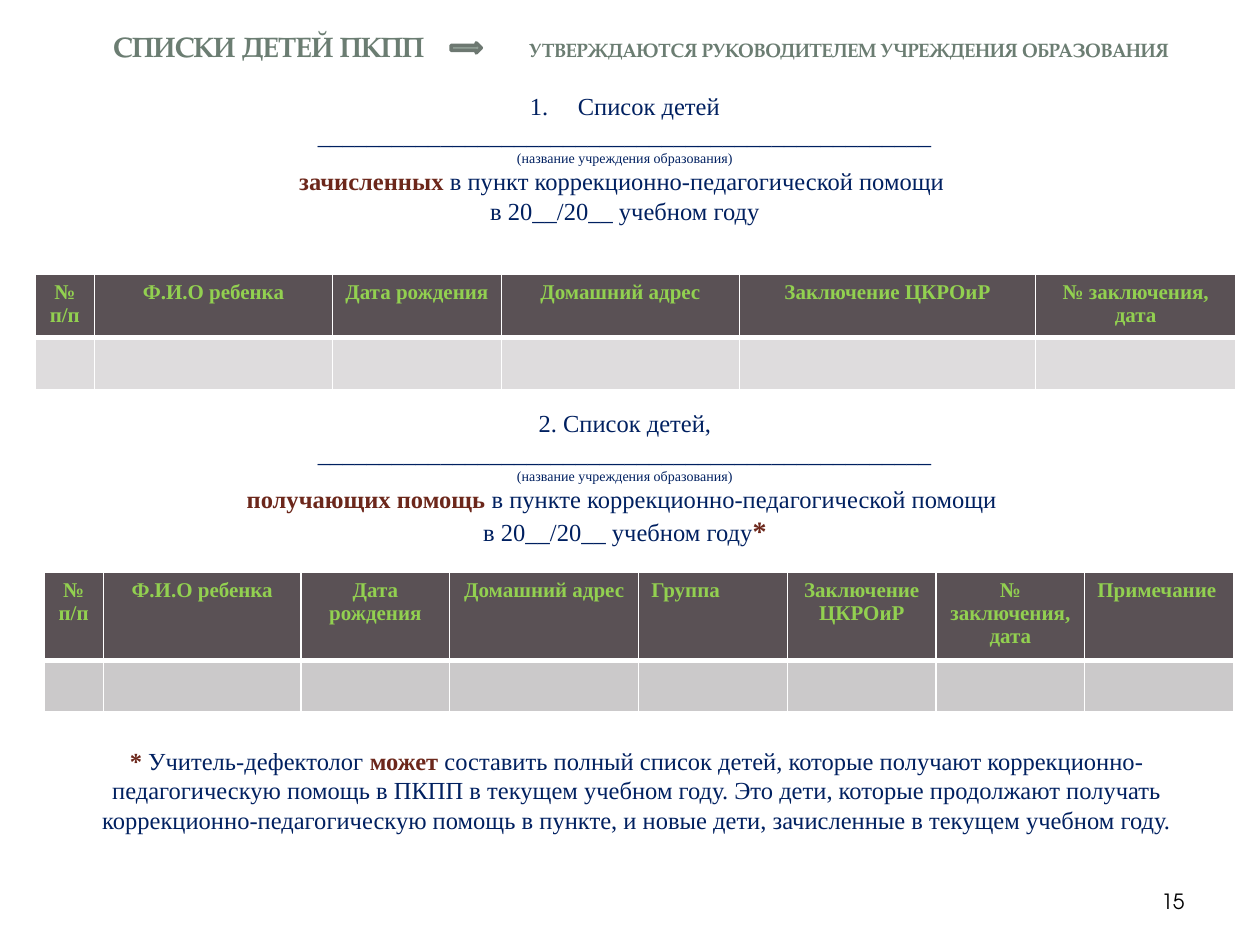
from lxml import etree
from pptx import Presentation
from pptx import util as u
from pptx.dml.color import RGBColor
from pptx.enum import shapes, text
from pptx.oxml.ns import qn

SERIF, TITLE_FONT, NUMBER_FONT = "Times New Roman", "TeX Gyre Pagella", "TeX Gyre Adventor"
NAVY, RED, GREEN, SAGE = "002060", "6C271B", "92D050", "6B7D72"
DARK, WHITE = "5A5155", "FFFFFF"
CENTER, LEFT, RIGHT = text.PP_ALIGN.CENTER, text.PP_ALIGN.LEFT, text.PP_ALIGN.RIGHT

# Content: a paragraph is a list of runs (text, size, colour, bold)
# Single lines: box, runs, font, alignment
LINES = [
    ((0.8, 0.13, 2.75, 0.47),
     [("СПИСКИ ДЕТЕЙ ПКПП", 16, SAGE, True)], TITLE_FONT, LEFT),
    ((4.1, 0.16, 5.63, 0.47),
     [("УТВЕРЖДАЮТСЯ РУКОВОДИТЕЛЕМ УЧРЕЖДЕНИЯ ОБРАЗОВАНИЯ", 11, SAGE, True)],
     TITLE_FONT, LEFT),
    ((7.17, 6.95, 2.33, 0.4), [("15", 12, "000000", False)], NUMBER_FONT, RIGHT),
]
INSTITUTION = [[("_" * 50, 14, NAVY, False)],
               [("(название учреждения образования)", 8, NAVY, False)]]
YEAR = ("в 20__/20__ учебном году", 14, NAVY, False)
ENROLLED = [[("Список детей", 14, NAVY, False)], *INSTITUTION,
            [("зачисленных", 14, RED, True),
             (" в пункт коррекционно-педагогической помощи ", 14, NAVY, False)],
            [YEAR]]
ASSISTED = [[("2. Список детей,", 14, NAVY, False)], *INSTITUTION,
            [("получающих помощь ", 14, RED, True),
             ("в пункте коррекционно-педагогической помощи ", 14, NAVY, False)],
            [YEAR, ("*", 16, RED, True)]]
FOOTNOTE = [[("*", 14, RED, True), (" Учитель-дефектолог ", 14, NAVY, False),
             ("может", 14, RED, True),
             (" составить полный список детей, которые получают "
              "коррекционно-педагогическую помощь в ПКПП в текущем учебном году. "
              "Это дети, которые продолжают получать коррекционно-педагогическую "
              "помощь в пункте, и новые дети, зачисленные в текущем учебном году.",
              14, NAVY, False)]]
# Tables: left, top, header height, opacity of the empty row, (heading, width, alignment)
TABLES = [
    (0.28, 2.18, 0.43, 20, [
        ("№ п/п", 0.47, CENTER), ("Ф.И.О ребенка", 1.89, CENTER),
        ("Дата рождения", 1.34, CENTER), ("Домашний адрес", 1.89, CENTER),
        ("Заключение ЦКРОиР", 2.35, CENTER), ("№ заключения, дата", 1.59, CENTER)]),
    (0.35, 4.54, 0.62, 31, [
        ("№ п/п", 0.47, CENTER), ("Ф.И.О ребенка", 1.57, CENTER),
        ("Дата рождения", 1.18, CENTER), ("Домашний адрес", 1.5, CENTER),
        ("Группа", 1.18, LEFT), ("Заключение ЦКРОиР", 1.18, CENTER),
        ("№ заключения, дата", 1.18, CENTER), ("Примечание", 1.18, LEFT)]),
]
EMPTY_ROW = 0.41


def color(value):
    return RGBColor.from_string(value)


def set_fill(fill, value, opacity=100):
    fill.solid()
    fill.fore_color.rgb = color(value)
    if opacity < 100:
        element = fill._xPr.find(qn("a:solidFill"))[0]
        etree.SubElement(element, qn("a:alpha")).set("val", str(opacity * 1000))


def add_runs(paragraph, runs, font=SERIF, align=CENTER):
    paragraph.alignment = align
    for words, size, value, bold in runs:
        run = paragraph.add_run()
        run.text = words
        run.font.size, run.font.bold, run.font.name = u.Pt(size), bold, font
        run.font.color.rgb = color(value)


def add_line(box, runs, font, align):
    frame = slide.shapes.add_textbox(*map(u.Inches, box)).text_frame
    frame.word_wrap = True
    frame.vertical_anchor = text.MSO_ANCHOR.MIDDLE
    add_runs(frame.paragraphs[0], runs, font, align)


def add_shape(kind, box, fill, line, opacity=100):
    shape = slide.shapes.add_shape(kind, *map(u.Inches, box))
    shape.shadow.inherit = False
    set_fill(shape.fill, fill, opacity)
    shape.line.color.rgb = color(line)
    shape.line.width = u.Pt(2)
    return shape


def add_panel(box, paragraphs, opacity=100):
    shape = add_shape(shapes.MSO_SHAPE.ROUNDED_RECTANGLE, box, WHITE, WHITE, opacity)
    frame = shape.text_frame
    frame.word_wrap = True
    frame.vertical_anchor = text.MSO_ANCHOR.MIDDLE
    for index, runs in enumerate(paragraphs):
        paragraph = frame.add_paragraph() if index else frame.paragraphs[0]
        add_runs(paragraph, runs)
    return frame


def set_borders(cell, **widths):
    properties = cell._tc.get_or_add_tcPr()
    for position, side in enumerate("LRTB"):
        line = etree.Element(qn("a:ln" + side), w=str(u.Pt(widths.get(side, 1))))
        fill = etree.SubElement(line, qn("a:solidFill"))
        etree.SubElement(fill, qn("a:srgbClr")).set("val", WHITE)
        properties.insert(position, line)


def add_list_table(left, top, header_height, opacity, columns):
    width = sum(column[1] for column in columns)
    table = slide.shapes.add_table(2, len(columns), *map(
        u.Inches, (left, top, width, header_height + EMPTY_ROW))).table
    table.rows[0].height = u.Inches(header_height)
    table.rows[1].height = u.Inches(EMPTY_ROW)
    for index, (heading, column_width, align) in enumerate(columns):
        table.columns[index].width = u.Inches(column_width)
        header, empty = table.cell(0, index), table.cell(1, index)
        add_runs(header.text_frame.paragraphs[0], [(heading, 12, GREEN, True)], align=align)
        set_fill(header.fill, DARK)
        set_fill(empty.fill, DARK, opacity)
        set_borders(header, B=3)
        set_borders(empty, T=3)


presentation = Presentation()
presentation.slide_width, presentation.slide_height = u.Inches(10), u.Inches(7.5)
slide = presentation.slides.add_slide(presentation.slide_layouts[6])

# Title parts and slide number
for line_content in LINES:
    add_line(*line_content)

# Tables
for table_content in TABLES:
    add_list_table(*table_content)

# Text panels; the first heading is numbered
enrolled = add_panel((1.3, 0.63, 7.32, 1.25), ENROLLED, 50)
properties = enrolled.paragraphs[0]._p.get_or_add_pPr()
properties.set("marL", str(u.Inches(0.38)))
properties.set("indent", str(u.Inches(-0.38)))
etree.SubElement(properties, qn("a:buAutoNum")).set("type", "arabicPeriod")
add_panel((1.3, 3.2, 7.32, 1.18), ASSISTED, 50)
add_panel((0.41, 5.8, 9.29, 0.94), FOOTNOTE)

# Arrow between the title parts
add_shape(shapes.MSO_SHAPE.RIGHT_ARROW, (3.58, 0.34, 0.24, 0.08), "93A299", "6D7871")

presentation.save("out.pptx")
